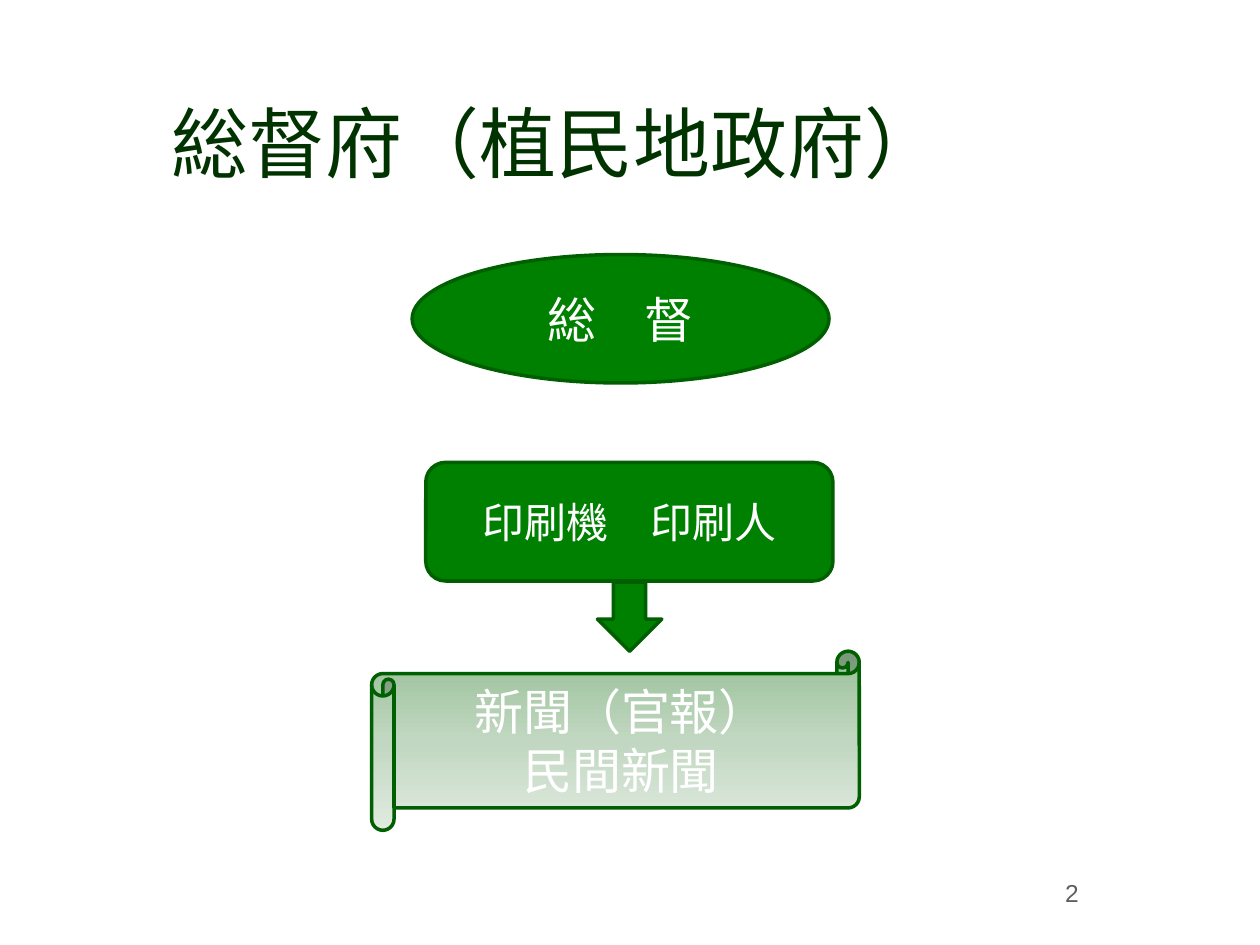
from copy import deepcopy

from lxml import etree
from pptx import Presentation
from pptx.dml.color import RGBColor
from pptx.enum.shapes import MSO_SHAPE
from pptx.enum.text import MSO_ANCHOR, PP_ALIGN
from pptx.oxml.ns import qn
from pptx.util import Inches, Pt

OVAL, ROUND = MSO_SHAPE.OVAL, MSO_SHAPE.ROUNDED_RECTANGLE
ARROW, SCROLL = MSO_SHAPE.DOWN_ARROW, MSO_SHAPE.HORIZONTAL_SCROLL
TOP, MIDDLE = MSO_ANCHOR.TOP, MSO_ANCHOR.MIDDLE
CENTER, RIGHT = PP_ALIGN.CENTER, PP_ALIGN.RIGHT

WHITE = RGBColor(0xFF, 0xFF, 0xFF)
GREEN = RGBColor(0x00, 0x80, 0x00)
EDGE = RGBColor(0x00, 0x5F, 0x00)
DARK = RGBColor(0x00, 0x33, 0x00)
GRAY = RGBColor(0x5F, 0x5F, 0x5F)
FADE = (RGBColor(0x98, 0xC0, 0x98), RGBColor(0xC1, 0xD7, 0xC1),
        RGBColor(0xE1, 0xEB, 0xE1))
LATIN, ASIAN, HEAD = "Arial", "Noto Sans CJK JP", "Montserrat"


def write(shape, *lines, size, color=WHITE, font=LATIN, asian=HEAD,
          align=CENTER, anchor=MIDDLE):
    """Fill a shape with one paragraph per line."""
    frame = shape.text_frame
    frame.word_wrap = True
    frame.vertical_anchor = anchor
    for i, line in enumerate(lines):
        para = frame.add_paragraph() if i else frame.paragraphs[0]
        para.alignment = align
        run = para.add_run()
        run.text = line
        run.font.name = font
        run.font.size = Pt(size)
        run.font.color.rgb = color
        east = etree.SubElement(run.font._element, qn("a:ea"))
        east.set("typeface", asian)


def label(slide, box, text, **style):
    write(slide.shapes.add_textbox(*map(Inches, box)), text, **style)


def block(slide, kind, box):
    """Add a green outlined shape."""
    shape = slide.shapes.add_shape(kind, *map(Inches, box))
    shape.shadow.inherit = False
    shape.fill.solid()
    shape.fill.fore_color.rgb = GREEN
    shape.line.color.rgb = EDGE
    shape.line.width = Pt(2)
    return shape


def fade(shape):
    """Shade a shape from top to bottom in three even stops."""
    fill = shape.fill
    fill.gradient()
    fill.gradient_angle = 270
    first = fill.gradient_stops[0]._gs
    first.addnext(deepcopy(first))
    for i, (stop, color) in enumerate(zip(fill.gradient_stops, FADE)):
        stop.position = i / 2
        stop.color.rgb = color


def chart(slide, left, top, width, height):
    """Draw the flow from governor to newspapers inside the box."""
    def part(x, y, w, h):
        return (left + x * width, top + y * height, w * width, h * height)

    # Governor
    oval = block(slide, OVAL, part(0.083, 0, 0.855, 0.223))
    write(oval, "総　督", size=28, font=ASIAN, asian=ASIAN)

    # Press and printer
    press = block(slide, ROUND, part(0.111, 0.361, 0.835, 0.206))
    write(press, "印刷機　印刷人", size=24)
    block(slide, ARROW, part(0.463, 0.569, 0.132, 0.12))

    # Newspapers
    paper = block(slide, SCROLL, part(0, 0.689, 1, 0.311))
    fade(paper)
    write(paper, "新聞（官報）", "民間新聞", size=28)


def main():
    deck = Presentation()
    deck.slide_width, deck.slide_height = Inches(10), Inches(7.5)
    slide = deck.slides.add_slide(deck.slide_layouts[6])
    label(slide, (6.58, 6.92, 2.08, 0.5), "2", size=14, color=GRAY,
          align=RIGHT, anchor=TOP)
    label(slide, (0.17, 0.5, 8.5, 1.25), "総督府（植民地政府）", size=44,
          color=DARK, font=HEAD)
    chart(slide, 2.95, 2.02, 3.87, 4.57)
    deck.save("out.pptx")


if __name__ == "__main__":
    main()
